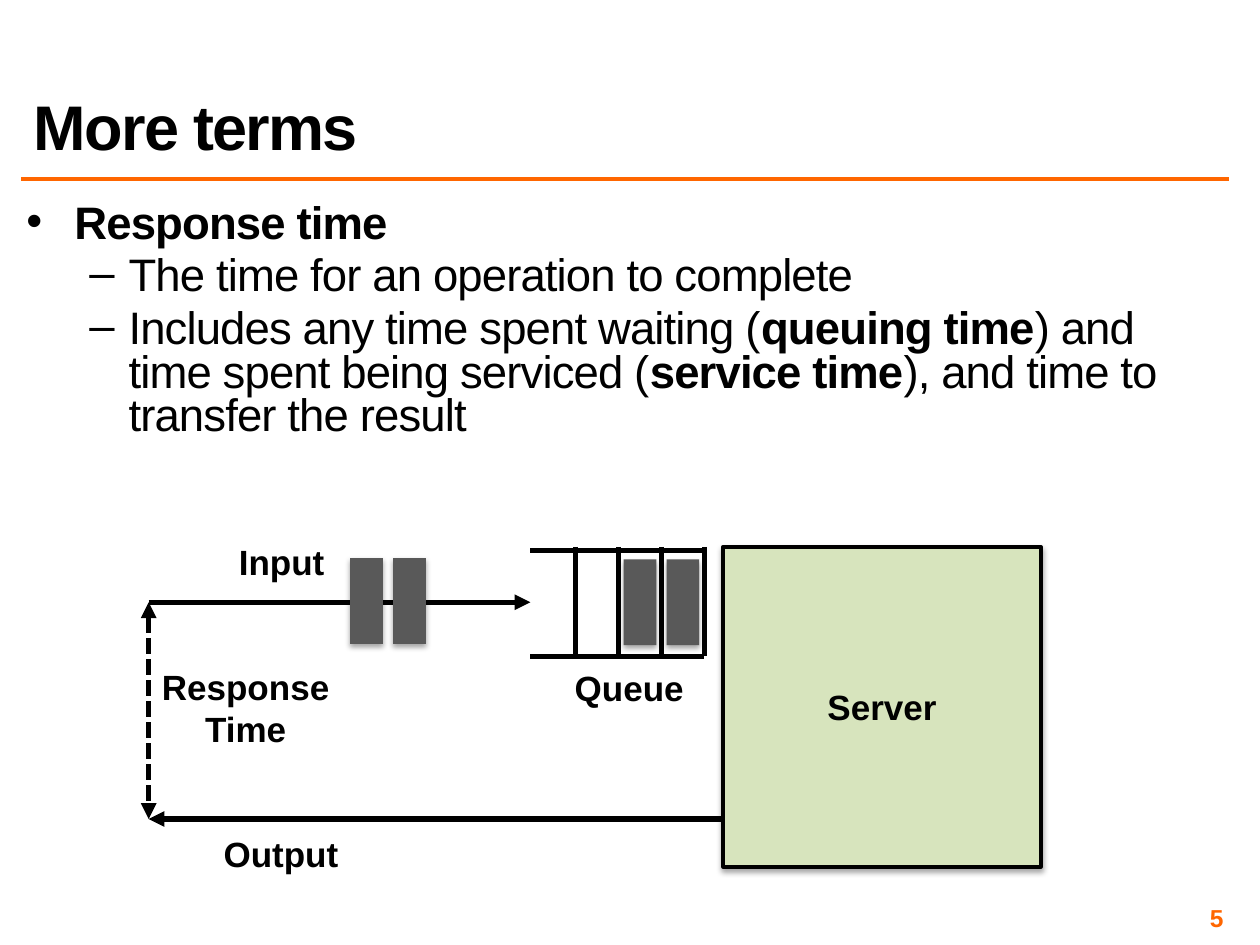
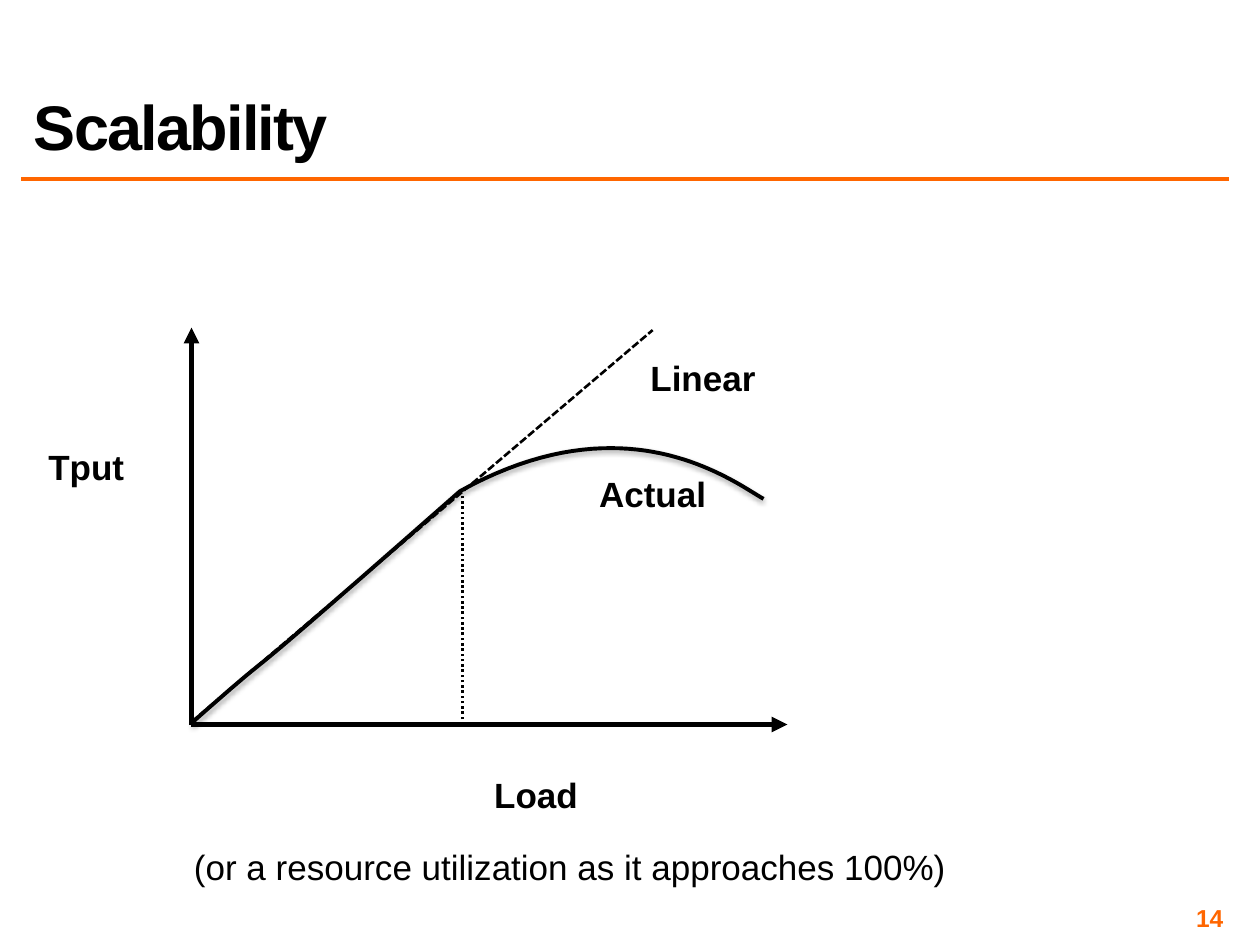
import pptx
import pptx.dml.color
import pptx.enum.dml
import pptx.enum.shapes
import pptx.enum.text
import pptx.oxml
import pptx.oxml.ns
import pptx.util

Inches = pptx.util.Inches
Pt = pptx.util.Pt
ALIGN = pptx.enum.text.PP_ALIGN
ANCHOR = pptx.enum.text.MSO_ANCHOR
DASH = pptx.enum.dml.MSO_LINE
FONT = "Arial"
BLACK, ORANGE, GREEN, GRAY = "000000", "FF6600", "D7E4BD", "595959"
NS = pptx.oxml.ns.nsdecls("a")
SHADOW = (f'<a:effectLst {NS}><a:outerShdw blurRad="{Pt(3.1)}" dist="{Pt(1.8)}" '
          'dir="5400000" rotWithShape="0"><a:srgbClr val="000000">'
          '<a:alpha val="35000"/></a:srgbClr></a:outerShdw></a:effectLst>')


def rgb(color):
    """Turn a hex string into a colour."""
    return pptx.dml.color.RGBColor.from_string(color)


def format_run(r, size, color=BLACK, bold=True, spacing=0):
    """Set the font of one run, with letter spacing in points."""
    r.font.name, r.font.size, r.font.bold = FONT, Pt(size), bold
    r.font.color.rgb = rgb(color)
    if spacing:
        r.font._element.set("spc", str(int(spacing * 100)))


def add_text(s, box, text="", size=20, color=BLACK, bold=True, align=ALIGN.CENTER,
             anchor=ANCHOR.TOP, wrap=False, inset=None, spacing=0):
    """Add a text box in which all runs share one format."""
    tf = s.shapes.add_textbox(*map(Inches, box)).text_frame
    tf.word_wrap, tf.vertical_anchor = wrap, anchor
    if inset is not None:
        tf.margin_left = tf.margin_right = Inches(inset)
        tf.margin_top = tf.margin_bottom = Inches(inset)
    tf.text = text
    for p in tf.paragraphs:
        p.alignment = align
        for r in p.runs:
            format_run(r, size, color, bold, spacing)
    return tf


def add_line(s, start, end, width=3, color=BLACK, dash=None, head=False, tail=False):
    """Add a straight line with optional dashes and arrowheads."""
    line = s.shapes.add_connector(pptx.enum.shapes.MSO_CONNECTOR.STRAIGHT,
                                  *map(Inches, (*start, *end)))
    line.line.width = Pt(width)
    line.line.color.rgb = rgb(color)
    if dash:
        line.line.dash_style = dash
    ln = line.line._get_or_add_ln()
    for tag, wanted in (("headEnd", head), ("tailEnd", tail)):
        if wanted:
            ln.append(pptx.oxml.parse_xml(f'<a:{tag} {NS} type="triangle"/>'))
    line._element.spPr.append(pptx.oxml.parse_xml(f"<a:effectLst {NS}/>"))


def add_shadow(sp):
    """Give a shape a soft shadow below it."""
    sp._element.spPr.append(pptx.oxml.parse_xml(SHADOW))


def add_rect(s, box, fill, border=None):
    """Add a shadowed rectangle with an optional border colour."""
    sp = s.shapes.add_shape(pptx.enum.shapes.MSO_SHAPE.RECTANGLE, *map(Inches, box))
    sp.fill.solid()
    sp.fill.fore_color.rgb = rgb(fill)
    if border:
        sp.line.color.rgb = rgb(border)
        sp.line.width = Pt(2.25)
    else:
        sp.line.fill.background()
    add_shadow(sp)
    return sp


def add_base_slide(prs, title, number):
    """Add a slide with the shared title, rule and slide number."""
    s = prs.slides.add_slide(prs.slide_layouts[6])
    add_line(s, (0.17, 1.42), (9.75, 1.42), 2, ORANGE)
    tf = add_text(s, (0.17, 0.17, 9.58, 1.17), title, 36, align=ALIGN.LEFT,
                  anchor=ANCHOR.BOTTOM, wrap=True, spacing=-1)
    tf.paragraphs[0].line_spacing = 0.8
    add_text(s, (7.42, 7.17, 2.33, 0.23), str(number), 14, ORANGE, align=ALIGN.RIGHT,
             anchor=ANCHOR.MIDDLE, wrap=True, inset=0.04)
    return s


def add_bullets(s, box, items):
    """Add bullets from pairs of level and (text, bold) runs."""
    tf = add_text(s, box, wrap=True, inset=0.04)
    styles = (("•", 0.38, -0.38), ("–", 0.81, -0.31))
    for i, (level, runs) in enumerate(items):
        p = tf.add_paragraph() if i else tf.paragraphs[0]
        p.level, p.alignment = level, ALIGN.LEFT
        p.line_spacing, p.space_before = 0.8, Pt(5.2)
        char, margin, indent = styles[level]
        pPr = p._p.get_or_add_pPr()
        pPr.set("marL", str(Inches(margin)))
        pPr.set("indent", str(Inches(indent)))
        pPr.append(pptx.oxml.parse_xml(f'<a:buFont {NS} typeface="{FONT}"/>'))
        pPr.append(pptx.oxml.parse_xml(f'<a:buChar {NS} char="{char}"/>'))
        for text, bold in runs:
            r = p.add_run()
            r.text = text
            format_run(r, 26, bold=bold, spacing=-0.5)


def add_queue(s, x, y):
    """Draw the queue with its slots, waiting jobs and label."""
    pitch, width, height = 0.34, 1.38, 0.87
    for rail_y in (y + 0.03, y + height):
        add_line(s, (x, rail_y), (x + width, rail_y))
    for i in range(4):
        slot_x = x + width - i * pitch
        add_line(s, (slot_x, y), (slot_x, y + height))
    for i in (1, 2):
        add_rect(s, (x + width + 0.04 - i * pitch, y + 0.1, 0.26, 0.68), GRAY)
    add_text(s, (x + 0.25, y + 0.9, 1.07, 0.44), "Queue")


def add_server_diagram(s, x, y):
    """Draw the path of a request through the queue and server."""
    input_y, output_y = y + 0.44, y + 2.16
    queue_x, server_x = x + 3.03, x + 4.56
    server = add_rect(s, (server_x, y, 2.52, 2.54), GREEN, BLACK)
    tf = server.text_frame
    tf.text = "Server"
    tf.vertical_anchor = ANCHOR.MIDDLE
    tf.paragraphs[0].alignment = ALIGN.CENTER
    format_run(tf.paragraphs[0].runs[0], 20)
    add_line(s, (x, input_y), (queue_x, input_y), tail=True)
    add_line(s, (server_x, output_y), (x, output_y), tail=True)
    add_line(s, (x, input_y), (x, output_y), dash=DASH.SQUARE_DOT, head=True, tail=True)
    add_queue(s, queue_x, y)
    for i in range(2):
        add_rect(s, (x + 1.6 + i * 0.34, y + 0.09, 0.26, 0.68), GRAY)
    add_text(s, (x + 0.61, y - 0.1, 0.89, 0.44), "Input")
    add_text(s, (x, y + 0.89, 1.54, 0.77), "Response\nTime")
    add_text(s, (x + 0.49, y + 2.22, 1.12, 0.44), "Output")


def bezier(points, steps=40):
    """Return points along a cubic curve, without its start."""
    def at(t):
        weights = ((1 - t) ** 3, 3 * t * (1 - t) ** 2, 3 * t * t * (1 - t), t ** 3)
        return tuple(sum(w * p[axis] for w, p in zip(weights, points)) for axis in (0, 1))
    return [at(i / steps) for i in range(1, steps + 1)]


def add_load_graph(s, x, y):
    """Plot linear and actual throughput from the origin at x, y."""
    add_line(s, (x, y), (x + 4.73, y), tail=True)
    add_line(s, (x, y), (x, y - 3.15), tail=True)
    add_line(s, (x, y - 0.02), (x + 3.66, y - 3.13), 1.5, dash=DASH.SQUARE_DOT)
    add_line(s, (x + 2.15, y), (x + 2.15, y - 1.83), 1.5, dash=DASH.ROUND_DOT)
    rise = [(0, -0.01), (0.93, -0.83), (-0.03, 0.05), (2.13, -1.85)]
    bend = [rise[-1], (3.44, -2.58), (4.28, -1.94), (4.54, -1.79)]
    start, *rest = [(Inches(x + dx), Inches(y + dy))
                    for dx, dy in rise[:1] + bezier(rise) + bezier(bend)]
    builder = s.shapes.build_freeform(*start)
    builder.add_line_segments(rest, close=False)
    curve = builder.convert_to_shape()
    curve.fill.background()
    curve.line.color.rgb = rgb(BLACK)
    curve.line.width = Pt(2.25)
    add_shadow(curve)
    for text, dx, dy, width in (("Load", 2.3, 0.34, 0.87), ("Tput", -1.24, -2.26, 0.81),
                                ("Linear", 3.54, -2.97, 1.04),
                                ("Actual", 3.13, -2.05, 1.06)):
        add_text(s, (x + dx, y + dy, width, 0.44), text)
    add_text(s, (x - 0.1, y + 0.91, 6.21, 0.44),
             "(or a resource utilization as it approaches 100%)", bold=False)


def main():
    """Build both slides and save them."""
    prs = pptx.Presentation()
    prs.slide_width, prs.slide_height = Inches(10), Inches(7.5)
    s = add_base_slide(prs, "More terms", 5)
    add_bullets(s, (0.17, 1.58, 9.58, 5.5), [
        (0, [("Response time", True)]),
        (1, [("The time for an operation to complete", False)]),
        (1, [("Includes any time spent waiting (", False), ("queuing time", True),
             (") and time spent being serviced (", False), ("service time", True),
             ("), and time to transfer the result", False)]),
    ])
    add_server_diagram(s, 1.18, 4.34)
    s = add_base_slide(prs, "Scalability", 14)
    add_load_graph(s, 1.52, 5.75)
    prs.save("out.pptx")


if __name__ == "__main__":
    main()
